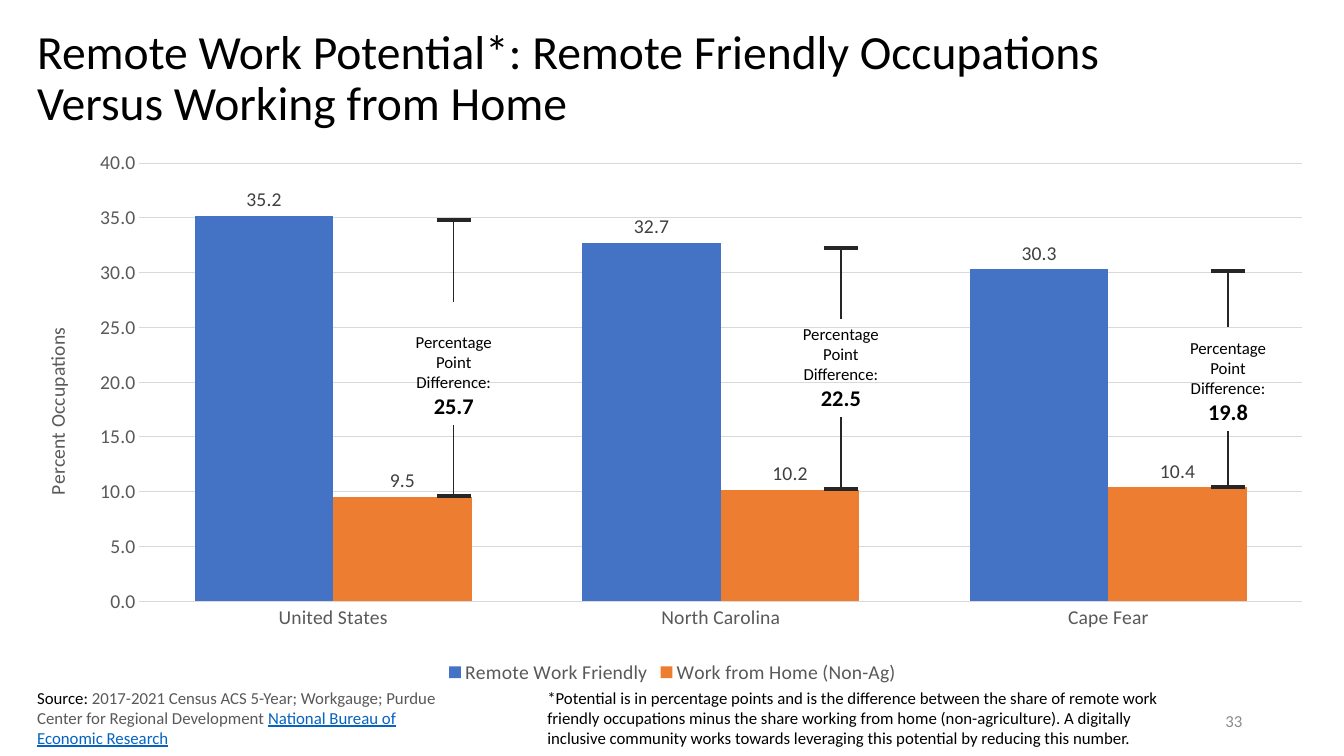
from dataclasses import dataclass

from lxml.etree import SubElement
from pptx import Presentation
from pptx.chart.data import CategoryChartData
from pptx.dml.color import RGBColor
from pptx.enum.chart import XL_CHART_TYPE, XL_LABEL_POSITION, XL_LEGEND_POSITION, XL_TICK_MARK
from pptx.enum.shapes import MSO_CONNECTOR
from pptx.enum.text import MSO_ANCHOR, MSO_AUTO_SIZE, PP_ALIGN
from pptx.oxml import parse_xml
from pptx.oxml.ns import nsdecls, qn
from pptx.util import Pt

PX = 9144


@dataclass(frozen=True)
class Theme:
    font: str = "Calibri"
    ink: str = "000000"
    muted: str = "595959"
    label: str = "404040"
    page: str = "8C8C8C"
    grid: str = "D9D9D9"
    bracket: str = "262626"
    reference: str = "0563C1"
    friendly: str = "4472C4"
    home: str = "ED7D31"
    title_size: int = 34
    value_size: int = 16
    chart_size: int = 14
    note_size: int = 12


class SlideBuilder:
    def __init__(self, slide, theme):
        self.slide = slide
        self.theme = theme

    def style(self, font, size, color, bold=False, underline=False):
        font.name = self.theme.font
        font.size = Pt(size)
        font.bold = bold
        font.underline = underline
        font.color.rgb = RGBColor.from_string(color)

    def text(self, box, lines, size, align=PP_ALIGN.LEFT, anchor=MSO_ANCHOR.TOP,
             spacing=None, grow=False):
        shape = self.slide.shapes.add_textbox(*(length * PX for length in box))
        frame = shape.text_frame
        frame.word_wrap = True
        frame.vertical_anchor = anchor
        frame.auto_size = MSO_AUTO_SIZE.SHAPE_TO_FIT_TEXT if grow else MSO_AUTO_SIZE.NONE
        paragraph = frame.paragraphs[0]
        paragraph.alignment = align
        if spacing:
            paragraph.line_spacing = spacing
        for index, line in enumerate(lines):
            if index:
                paragraph.add_line_break()
            for words, look in line:
                run = paragraph.add_run()
                run.text = words
                self.style(run.font, **{"size": size, "color": self.theme.ink, **look})
        return shape

    def line(self, start, end, width, start_joint=None, end_joint=None):
        points = (length * PX for length in (*start, *end))
        connector = self.slide.shapes.add_connector(MSO_CONNECTOR.STRAIGHT, *points)
        connector.line.color.rgb = RGBColor.from_string(self.theme.bracket)
        connector.line.width = Pt(width)
        SubElement(connector._element.spPr, qn("a:effectLst"))
        if start_joint:
            connector.begin_connect(*start_joint)
        if end_joint:
            connector.end_connect(*end_joint)

    def difference(self, center, caption_top, value, top, upper_end, bottom):
        lines = [[("Percentage", {})], [("Point", {})], [("Difference:", {})],
                 [(value, {"size": self.theme.value_size, "bold": True})]]
        caption = self.text((center - 66, caption_top, 132, 98), lines,
                            self.theme.note_size, PP_ALIGN.CENTER, grow=True)
        for level in (top, bottom):
            self.line((center - 17, level), (center + 17, level), 3)
        joint = (caption, 0) if upper_end == caption_top else None
        self.line((center, top), (center, upper_end), 1, end_joint=joint)
        self.line((center, caption_top + 98), (center, bottom), 1, start_joint=(caption, 2))

    def layout(self, x, y, w=None, h=None):
        size = f'<c:w val="{w}"/><c:h val="{h}"/>' if w else ""
        target = '<c:layoutTarget val="inner"/>' if w else ""
        return parse_xml(
            f'<c:layout {nsdecls("c")}><c:manualLayout>{target}<c:xMode val="edge"/>'
            f'<c:yMode val="edge"/><c:x val="{x}"/><c:y val="{y}"/>{size}'
            '</c:manualLayout></c:layout>')

    def columns(self, box, categories, shares, axis_title):
        theme = self.theme
        data = CategoryChartData(number_format="0.0")
        data.categories = categories
        for name, values, _ in shares:
            data.add_series(name, values)
        chart = self.slide.shapes.add_chart(
            XL_CHART_TYPE.COLUMN_CLUSTERED, *(length * PX for length in box), data).chart
        self.style(chart.font, theme.chart_size, theme.muted)
        chart.has_title = False
        chart.has_legend = True
        chart.legend.position = XL_LEGEND_POSITION.BOTTOM
        chart.legend.include_in_layout = False
        self.style(chart.legend.font, theme.chart_size, theme.muted)

        plot = chart.plots[0]
        plot.gap_width = 80
        plot.overlap = 0
        plot.vary_by_categories = False
        for series, (_, _, color) in zip(plot.series, shares):
            series.format.fill.solid()
            series.format.fill.fore_color.rgb = RGBColor.from_string(color)
            labels = series.data_labels
            labels.show_value = True
            labels.number_format = "0.0"
            labels.number_format_is_linked = False
            labels.position = XL_LABEL_POSITION.OUTSIDE_END
            self.style(labels.font, theme.chart_size, theme.label)

        percent = chart.value_axis
        percent.minimum_scale, percent.maximum_scale, percent.major_unit = 0, 40, 5
        percent.tick_labels.number_format = "0.0"
        percent.tick_labels.number_format_is_linked = False
        percent.format.line.fill.background()
        for axis in (chart.category_axis, percent):
            axis.major_tick_mark = axis.minor_tick_mark = XL_TICK_MARK.NONE
            self.style(axis.tick_labels.font, theme.chart_size, theme.muted)
        for rule in (chart.category_axis.format.line, percent.major_gridlines.format.line):
            rule.color.rgb = RGBColor.from_string(theme.grid)
            rule.width = Pt(0.75)

        heading = percent.axis_title.text_frame.paragraphs[0].add_run()
        heading.text = axis_title
        self.style(heading.font, theme.chart_size, theme.muted)
        title_element = percent.axis_title._element
        plot_area = chart._chartSpace.chart.plotArea
        for element in (title_element, plot_area):
            for automatic in element.findall(qn("c:layout")):
                element.remove(automatic)
        title_element.find(qn("c:tx")).addnext(self.layout(0.01, 0.33))
        plot_area.insert(0, self.layout(0.087, 0.035, 0.901, 0.805))


def main():
    theme = Theme()
    presentation = Presentation()
    presentation.slide_width = 1333 * PX
    presentation.slide_height = 750 * PX
    slide = presentation.slides.add_slide(presentation.slide_layouts[6])
    builder = SlideBuilder(slide, theme)

    builder.text((27, 15, 1276, 128),
                 [[("Remote Work Potential*: Remote Friendly Occupations", {})],
                  [("Versus Working from Home", {})]],
                 theme.title_size, anchor=MSO_ANCHOR.MIDDLE, spacing=0.9)
    builder.text((942, 695, 300, 40), [[("33", {"color": theme.page})]],
                 theme.note_size, PP_ALIGN.RIGHT, MSO_ANCHOR.MIDDLE)
    builder.columns((27, 143, 1280, 540),
                    ("United States", "North Carolina", "Cape Fear"),
                    (("Remote Work Friendly", (35.2, 32.7, 30.3), theme.friendly),
                     ("Work from Home (Non-Ag)", (9.5, 10.2, 10.4), theme.home)),
                    "Percent Occupations")

    differences = (("25.7", 324, 218, 300, 492),
                   ("22.5", 316, 246, 316, 485),
                   ("19.8", 330, 269, 324, 483))
    for region, (value, caption_top, top, upper_end, bottom) in enumerate(differences):
        builder.difference(450 + 384 * region, caption_top, value, top, upper_end, bottom)

    builder.text((27, 677, 440, 71), [[
        ("Source: ", {}),
        ("2017-2021 Census ACS 5-Year; Workgauge; Purdue Center for Regional Development ",
         {"color": theme.muted}),
        ("National Bureau of Economic Research",
         {"color": theme.reference, "underline": True})]],
        theme.note_size, grow=True)
    builder.text((533, 677, 654, 71), [[
        ("*Potential is in percentage points and is the difference between the share of "
         "remote work friendly occupations minus the share working from home "
         "(non-agriculture). A digitally inclusive community works towards leveraging "
         "this potential by reducing this number.", {})]],
        theme.note_size, grow=True)
    presentation.save("out.pptx")


if __name__ == "__main__":
    main()
